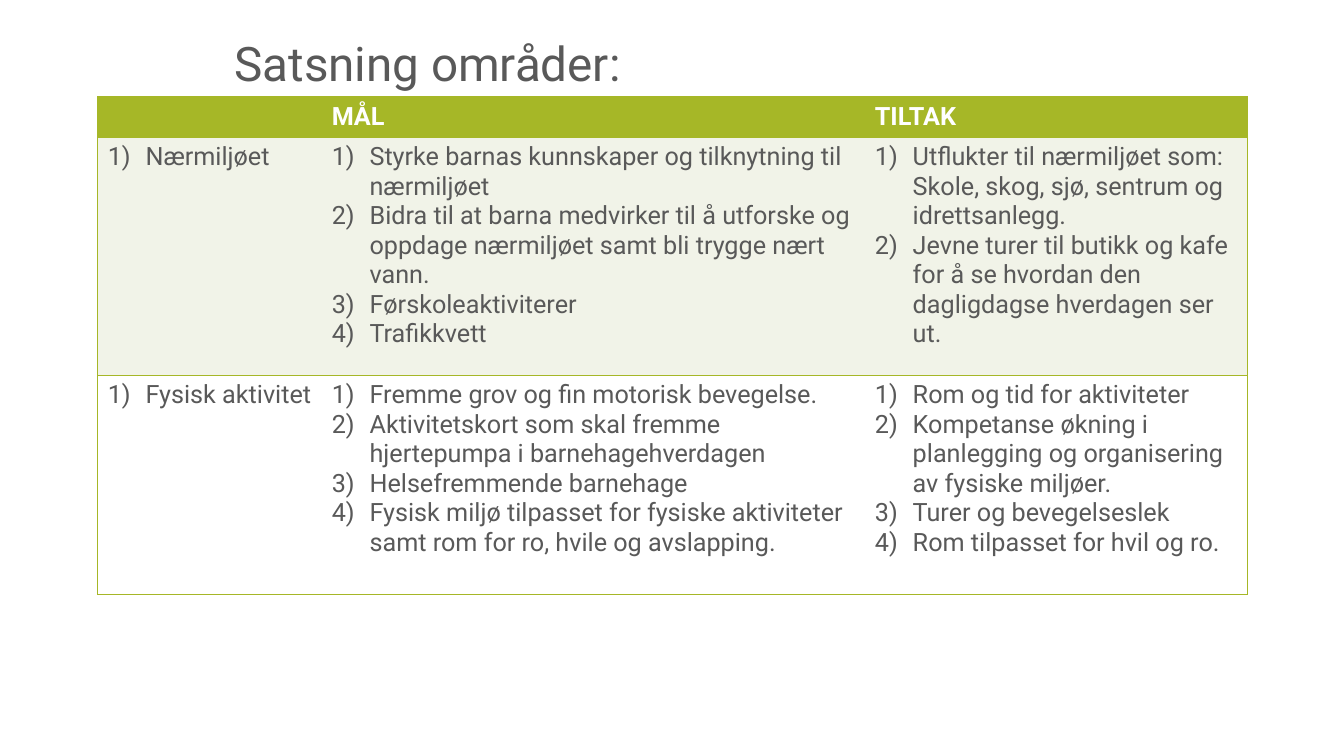
"""Build the slide with goals and measures for the focus areas."""
from dataclasses import dataclass

import pptx
import pptx.dml.color
import pptx.enum.text
import pptx.oxml
import pptx.oxml.ns
import pptx.util
from lxml import etree

Pt = pptx.util.Pt
RGBColor = pptx.dml.color.RGBColor

GREEN = RGBColor(0xA6, 0xB7, 0x27)
PALE = RGBColor(0xF1, 0xF3, 0xE8)
WHITE = RGBColor(0xFF, 0xFF, 0xFF)
GREY = RGBColor(0x59, 0x59, 0x59)
FONT = "Roboto"
INDENT = Pt(27)
COL_WIDTHS = (160, 388, 273.6)


@dataclass(frozen=True)
class Row:
    """One table row with its look and the paragraphs of each cell."""
    height: float
    fill: RGBColor
    color: RGBColor
    header: bool
    cells: tuple[tuple[str, ...], ...]


ROWS = (
    Row(28.8, GREEN, WHITE, True, ((), ("MÅL",), ("TILTAK",))),
    Row(170, PALE, GREY, False, (
        ("Nærmiljøet",),
        ("Styrke barnas kunnskaper og tilknytning til nærmiljøet",
         "Bidra til at barna medvirker til å utforske og oppdage nærmiljøet "
         "samt bli trygge nært vann.",
         "Førskoleaktiviterer",
         "Trafikkvett"),
        ("Utflukter til nærmiljøet som: Skole, skog, sjø, sentrum og idrettsanlegg.",
         "Jevne turer til butikk og kafe for å se hvordan den dagligdagse "
         "hverdagen ser ut."))),
    Row(157, WHITE, GREY, False, (
        ("Fysisk aktivitet",),
        ("Fremme grov og fin motorisk bevegelse.",
         "Aktivitetskort som skal fremme hjertepumpa i barnehagehverdagen",
         "Helsefremmende barnehage",
         "Fysisk miljø tilpasset for fysiske aktiviteter samt rom for ro, "
         "hvile og avslapping."),
        ("Rom og tid for aktiviteter",
         "Kompetanse økning i planlegging og organisering av fysiske miljøer.",
         "Turer og bevegelseslek",
         "Rom tilpasset for hvil og ro."))),
)


def add_run(p, text: str, size: float, color: RGBColor, bold: bool = False) -> None:
    """Add one formatted run to a paragraph."""
    r = p.add_run()
    r.text = text
    r.font.name = FONT
    r.font.size = Pt(size)
    r.font.bold = bold
    r.font.color.rgb = color


def number(p) -> None:
    """Give a paragraph a hanging automatic number."""
    pPr = p._p.get_or_add_pPr()
    pPr.set("marL", str(INDENT))
    pPr.set("indent", str(-INDENT))
    bullet = etree.SubElement(pPr, pptx.oxml.ns.qn("a:buAutoNum"))
    bullet.set("type", "arabicParenR")


def set_borders(cell, first: bool, last: bool) -> None:
    """Draw the horizontal rules and the outer edges of the table."""
    tcPr = cell._tc.get_or_add_tcPr()
    for side, shown in (("L", first), ("R", last), ("T", True), ("B", True)):
        ln = etree.SubElement(tcPr, pptx.oxml.ns.qn(f"a:ln{side}"))
        ln.set("w", str(Pt(1)))
        if shown:
            fill = etree.SubElement(ln, pptx.oxml.ns.qn("a:solidFill"))
            etree.SubElement(fill, pptx.oxml.ns.qn("a:srgbClr")).set("val", str(GREEN))
        else:
            etree.SubElement(ln, pptx.oxml.ns.qn("a:noFill"))


def fill_cell(cell, row: Row, texts: tuple[str, ...]) -> None:
    """Colour a cell and write its paragraphs."""
    cell.fill.solid()
    cell.fill.fore_color.rgb = row.fill
    tf = cell.text_frame
    for i, text in enumerate(texts):
        p = tf.paragraphs[0] if i == 0 else tf.add_paragraph()
        if not row.header:
            number(p)
        add_run(p, text, 18, row.color, row.header)


def add_title(s) -> None:
    """Add the slide title."""
    sp = s.shapes.add_textbox(Pt(160.5), Pt(22.3), Pt(659), Pt(46.8))
    tf = sp.text_frame
    tf.word_wrap = True
    tf.vertical_anchor = pptx.enum.text.MSO_ANCHOR.BOTTOM
    p = tf.paragraphs[0]
    p.line_spacing = 0.9
    add_run(p, "Satsning områder:", 34, GREY)


def add_goals_table(s) -> None:
    """Add the table of areas, goals and measures."""
    height = sum(row.height for row in ROWS)
    tbl = s.shapes.add_table(len(ROWS), len(COL_WIDTHS), Pt(69.8), Pt(69.1),
                             Pt(sum(COL_WIDTHS)), Pt(height)).table
    for col, width in zip(tbl.columns, COL_WIDTHS):
        col.width = Pt(width)
    last = len(COL_WIDTHS) - 1
    for i, row in enumerate(ROWS):
        tbl.rows[i].height = Pt(row.height)
        for j, texts in enumerate(row.cells):
            cell = tbl.cell(i, j)
            set_borders(cell, j == 0, j == last)
            fill_cell(cell, row, texts)


def main() -> None:
    """Create and save the presentation."""
    prs = pptx.Presentation()
    prs.slide_width, prs.slide_height = Pt(960), Pt(540)
    s = prs.slides.add_slide(prs.slide_layouts[6])
    add_title(s)
    add_goals_table(s)
    prs.save("out.pptx")


if __name__ == "__main__":
    main()
